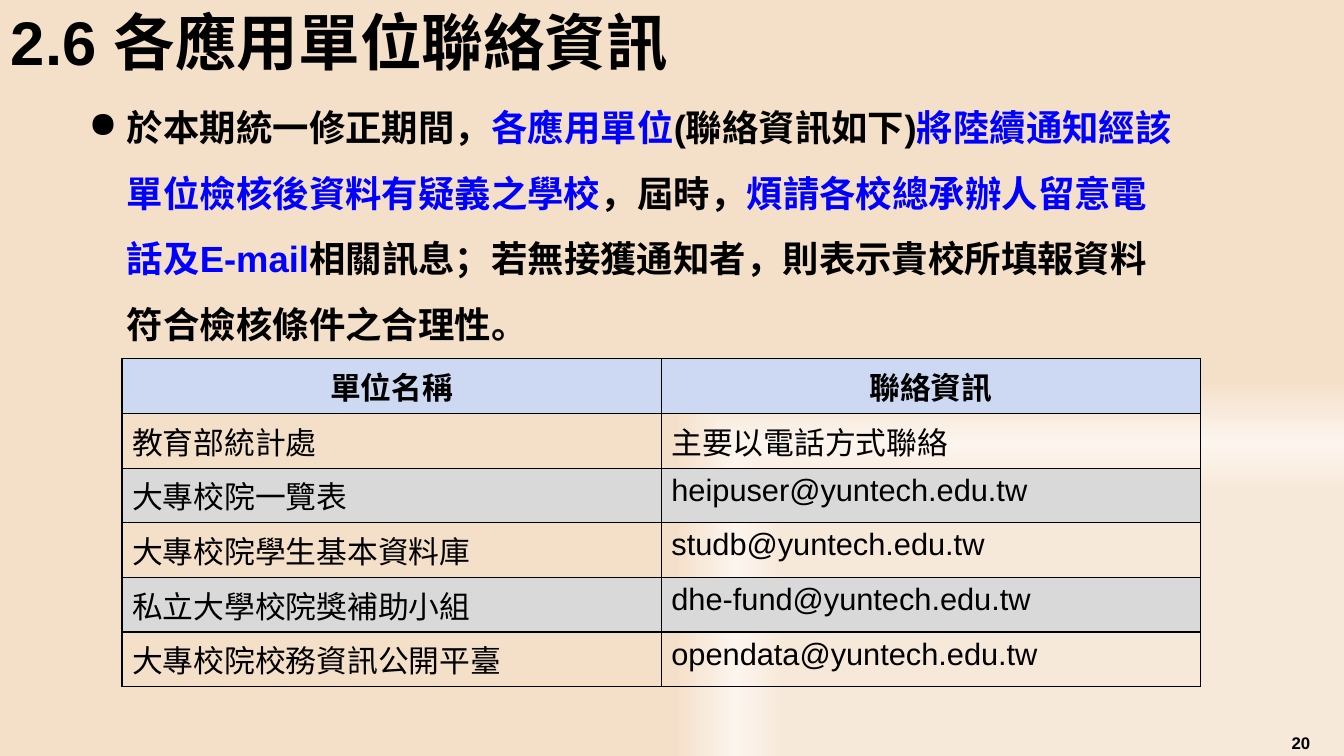
from lxml.etree import SubElement
from pptx import Presentation
from pptx.dml.color import RGBColor
from pptx.enum.text import MSO_ANCHOR, MSO_AUTO_SIZE, PP_ALIGN
from pptx.oxml.ns import qn
from pptx.util import Pt

BLACK = "000000"
BLUE = "0000FF"
HEADER_FILL = "CDD9F3"
BAND_FILL = "D9D9D9"

BACKGROUND_STOPS = [(0, "F7E8D7"), (70, "F7E9D9"), (83, "FCF5EE"), (100, "F4DFC8")]

NOTICE = [
    ("於本期統一修正期間，", BLACK),
    ("各應用單位", BLUE),
    ("(聯絡資訊如下)", BLACK),
    ("將陸續通知經該單位檢核後資料有疑義之學校", BLUE),
    ("，屆時，", BLACK),
    ("煩請各校總承辦人留意電話及E-mail", BLUE),
    ("相關訊息；若無接獲通知者，則表示貴校所填報資料符合檢核條件之合理性。", BLACK),
]

CONTACTS = [
    ("單位名稱", "聯絡資訊"),
    ("教育部統計處", "主要以電話方式聯絡"),
    ("大專校院一覽表", "heipuser@yuntech.edu.tw"),
    ("大專校院學生基本資料庫", "studb@yuntech.edu.tw"),
    ("私立大學校院獎補助小組", "dhe-fund@yuntech.edu.tw"),
    ("大專校院校務資訊公開平臺", "opendata@yuntech.edu.tw"),
]


def color(hex_string):
    return RGBColor.from_string(hex_string)


class SlideBuilder:
    font_name = "Arial"

    def __init__(self, slide):
        self.slide = slide

    def format_run(self, run, size, hex_string=BLACK, bold=True):
        run.font.name = self.font_name
        run.font.size = Pt(size)
        run.font.bold = bold
        run.font.color.rgb = color(hex_string)

    def background(self, stops):
        self.slide.background.fill.gradient()
        gradient = self.slide.element.xpath(".//a:gradFill")[0]
        for child in list(gradient):
            gradient.remove(child)
        stop_list = SubElement(gradient, qn("a:gsLst"))
        for percent, hex_string in stops:
            stop = SubElement(stop_list, qn("a:gs"), pos=str(percent * 1000))
            SubElement(stop, qn("a:srgbClr"), val=hex_string)
        shade = SubElement(gradient, qn("a:path"))
        shade.set("path", "rect")
        SubElement(shade, qn("a:fillToRect"), l="100000", t="100000")

    def text(self, box, parts, size, align=PP_ALIGN.LEFT, line_spacing=1.0,
             anchor=MSO_ANCHOR.TOP, bullet=None, indent=0, grow=False):
        shape = self.slide.shapes.add_textbox(*map(Pt, box))
        frame = shape.text_frame
        frame.word_wrap = True
        frame.auto_size = MSO_AUTO_SIZE.SHAPE_TO_FIT_TEXT if grow else MSO_AUTO_SIZE.NONE
        frame.vertical_anchor = anchor
        paragraph = frame.paragraphs[0]
        paragraph.alignment = align
        paragraph.line_spacing = line_spacing
        if bullet:
            properties = paragraph._p.get_or_add_pPr()
            properties.set("marL", str(Pt(indent)))
            properties.set("indent", str(-Pt(indent)))
            SubElement(properties, qn("a:buChar"), char=bullet)
        for words, hex_string in parts:
            run = paragraph.add_run()
            run.text = words
            self.format_run(run, size, hex_string)

    def cell_borders(self, cell):
        properties = cell._tc.get_or_add_tcPr()
        for side in ("lnL", "lnR", "lnT", "lnB"):
            line = SubElement(properties, qn(f"a:{side}"), w=str(Pt(1)))
            fill = SubElement(line, qn("a:solidFill"))
            SubElement(fill, qn("a:srgbClr"), val=BLACK)

    def table(self, box, rows, size):
        frame = self.slide.shapes.add_table(len(rows), len(rows[0]), *map(Pt, box))
        table = frame.table
        table.first_row = False
        table.horz_banding = False
        for row_index, row in enumerate(rows):
            is_header = row_index == 0
            for column_index, words in enumerate(row):
                cell = table.cell(row_index, column_index)
                self.cell_borders(cell)
                if is_header or row_index % 2 == 0:
                    cell.fill.solid()
                    cell.fill.fore_color.rgb = color(HEADER_FILL if is_header else BAND_FILL)
                else:
                    cell.fill.background()
                cell.text_frame.text = words
                paragraph = cell.text_frame.paragraphs[0]
                paragraph.alignment = PP_ALIGN.CENTER if is_header else PP_ALIGN.LEFT
                self.format_run(paragraph.runs[0], size, bold=is_header)


def main():
    presentation = Presentation()
    presentation.slide_width = Pt(960)
    presentation.slide_height = Pt(540)
    builder = SlideBuilder(presentation.slides.add_slide(presentation.slide_layouts[6]))
    builder.background(BACKGROUND_STOPS)
    builder.text((898.6, 519.8, 61.2, 20.2), [("20", BLACK)], 12, align=PP_ALIGN.CENTER)
    builder.table((87.2, 256.3, 770.4, 234), CONTACTS, 22)
    builder.text((0.7, 8.6, 558.7, 48.2), [("2.6 各應用單位聯絡資訊", BLACK)], 44,
                 line_spacing=0.9, anchor=MSO_ANCHOR.MIDDLE)
    builder.text((56.2, 56.2, 794.9, 196.6), NOTICE, 26, line_spacing=1.5,
                 bullet="●", indent=27.4, grow=True)
    presentation.save("out.pptx")


if __name__ == "__main__":
    main()
